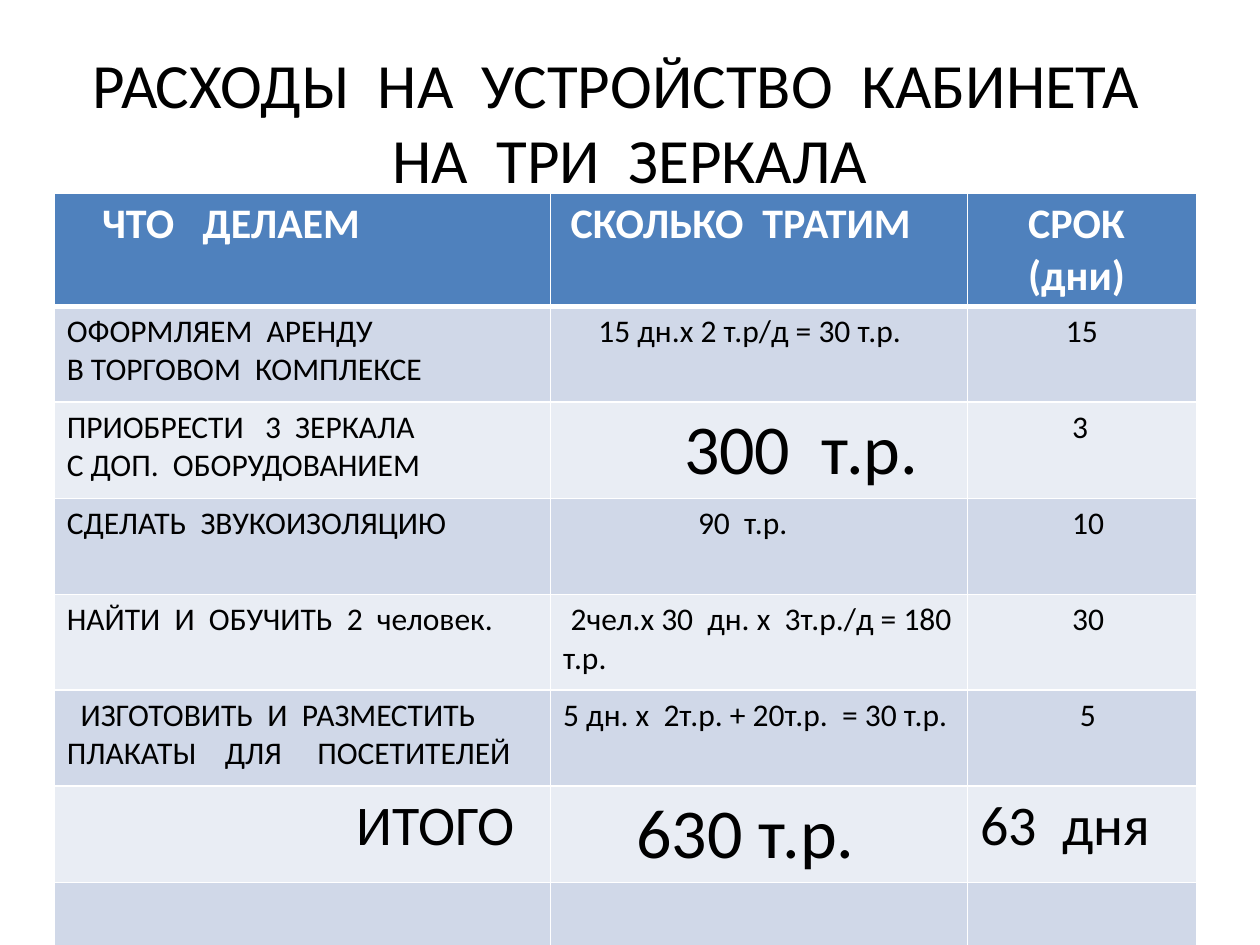
from pptx import Presentation
from pptx import util as u
from pptx.dml import color
from pptx.enum import text
from pptx.oxml import ns
from lxml import etree

FONT = "Calibri"
HEADER, BANDS = "4F81BD", ("E9EDF4", "D0D8E8")
WHITE, BLACK = "FFFFFF", "000000"
COLUMN_WIDTHS = (3.94, 3.31, 1.82)
HEADER_HEIGHT, ROW_HEIGHT = 0.9, 0.76

# Each cell is (lines, first-line indent of each line in inches, size in points).
ROWS = (
    ((["ЧТО   ДЕЛАЕМ"], [0.28], 24),
     (["СКОЛЬКО  ТРАТИМ"], [0.06], 24),
     (["СРОК", "(дни)"], [0.38, 0.38], 24)),
    ((["ОФОРМЛЯЕМ  АРЕНДУ", "В ТОРГОВОМ  КОМПЛЕКСЕ"], [0, 0], 18),
     (["15 дн.х 2 т.р/д = 30 т.р."], [0.28], 18),
     (["15"], [0.68], 18)),
    ((["ПРИОБРЕСТИ   3  ЗЕРКАЛА", "С ДОП.  ОБОРУДОВАНИЕМ"], [0, 0], 18),
     (["300  т.р."], [0.96], 40),
     (["3"], [0.73], 18)),
    ((["СДЕЛАТЬ  ЗВУКОИЗОЛЯЦИЮ"], [0], 18),
     (["90  т.р."], [1.07], 18),
     (["10"], [0.73], 18)),
    ((["НАЙТИ  И  ОБУЧИТЬ  2  человек."], [0], 18),
     (["2чел.х 30  дн. х  3т.р./д = 180 т.р."], [0.06], 18),
     (["30"], [0.73], 18)),
    ((["ИЗГОТОВИТЬ  И  РАЗМЕСТИТЬ", "ПЛАКАТЫ    ДЛЯ     ПОСЕТИТЕЛЕЙ"], [0.11, 0], 18),
     (["5 дн. х  2т.р. + 20т.р.  = 30 т.р."], [0], 18),
     (["5"], [0.79], 18)),
    ((["ИТОГО"], [2.3], 32),
     (["630 т.р."], [0.58], 40),
     (["63  дня"], [0], 32)),
    (([], [], 18),) * 3,
)


def rgb(value):
    """Return the colour for a hex string."""
    return color.RGBColor.from_string(value)


def add_run(paragraph, words, size, colour, bold=False):
    """Add one formatted run to a paragraph."""
    run = paragraph.add_run()
    run.text = words
    run.font.name = FONT
    run.font.size = u.Pt(size)
    run.font.bold = bold
    run.font.color.rgb = rgb(colour)


def set_borders(cell, top, bottom):
    """Draw white borders round a cell, with top and bottom widths in points."""
    properties = cell._tc.get_or_add_tcPr()
    for side, width in (("L", 1), ("R", 1), ("T", top), ("B", bottom)):
        line = etree.SubElement(properties, ns.qn(f"a:ln{side}"), w=str(u.Pt(width)))
        fill = etree.SubElement(line, ns.qn("a:solidFill"))
        etree.SubElement(fill, ns.qn("a:srgbClr"), val=WHITE)


def fill_cell(cell, lines, indents, size, colour, bold):
    """Write the lines of a cell, each with its own first-line indent."""
    frame = cell.text_frame
    for index, (words, indent) in enumerate(zip(lines, indents)):
        paragraph = frame.add_paragraph() if index else frame.paragraphs[0]
        properties = paragraph._p.get_or_add_pPr()
        properties.set("marL", "0")
        properties.set("indent", str(u.Inches(indent)))
        add_run(paragraph, words, size, colour, bold)


def add_title(slide, left, top, width, height):
    """Place the centred title in the given box."""
    frame = slide.shapes.add_textbox(left, top, width, height).text_frame
    frame.word_wrap = True
    frame.vertical_anchor = text.MSO_ANCHOR.MIDDLE
    paragraph = frame.paragraphs[0]
    paragraph.alignment = text.PP_ALIGN.CENTER
    add_run(paragraph, "РАСХОДЫ  НА  УСТРОЙСТВО  КАБИНЕТА   НА  ТРИ  ЗЕРКАЛА", 36, BLACK)


def add_cost_table(slide, left, top, width, height):
    """Place the table of costs and terms in the given box."""
    table = slide.shapes.add_table(
        len(ROWS), len(COLUMN_WIDTHS), left, top, width, height).table
    for column, column_width in zip(table.columns, COLUMN_WIDTHS):
        column.width = u.Inches(column_width)
    for row_index, row in enumerate(ROWS):
        header = row_index == 0
        table.rows[row_index].height = u.Inches(HEADER_HEIGHT if header else ROW_HEIGHT)
        for column_index, (lines, indents, size) in enumerate(row):
            cell = table.cell(row_index, column_index)
            set_borders(cell, 3 if row_index == 1 else 1, 3 if header else 1)
            cell.fill.solid()
            cell.fill.fore_color.rgb = rgb(HEADER if header else BANDS[row_index % 2])
            fill_cell(cell, lines, indents, size, WHITE if header else BLACK, header)


def main():
    """Build and save the slide."""
    presentation = Presentation()
    presentation.slide_width, presentation.slide_height = u.Inches(10), u.Inches(7.5)
    slide = presentation.slides.add_slide(presentation.slide_layouts[6])
    add_title(slide, u.Inches(0.5), u.Inches(0.3), u.Inches(9), u.Inches(1.32))
    add_cost_table(slide, u.Inches(0.43), u.Inches(1.53), u.Inches(9.07), u.Inches(6.22))
    presentation.save("out.pptx")


if __name__ == "__main__":
    main()
